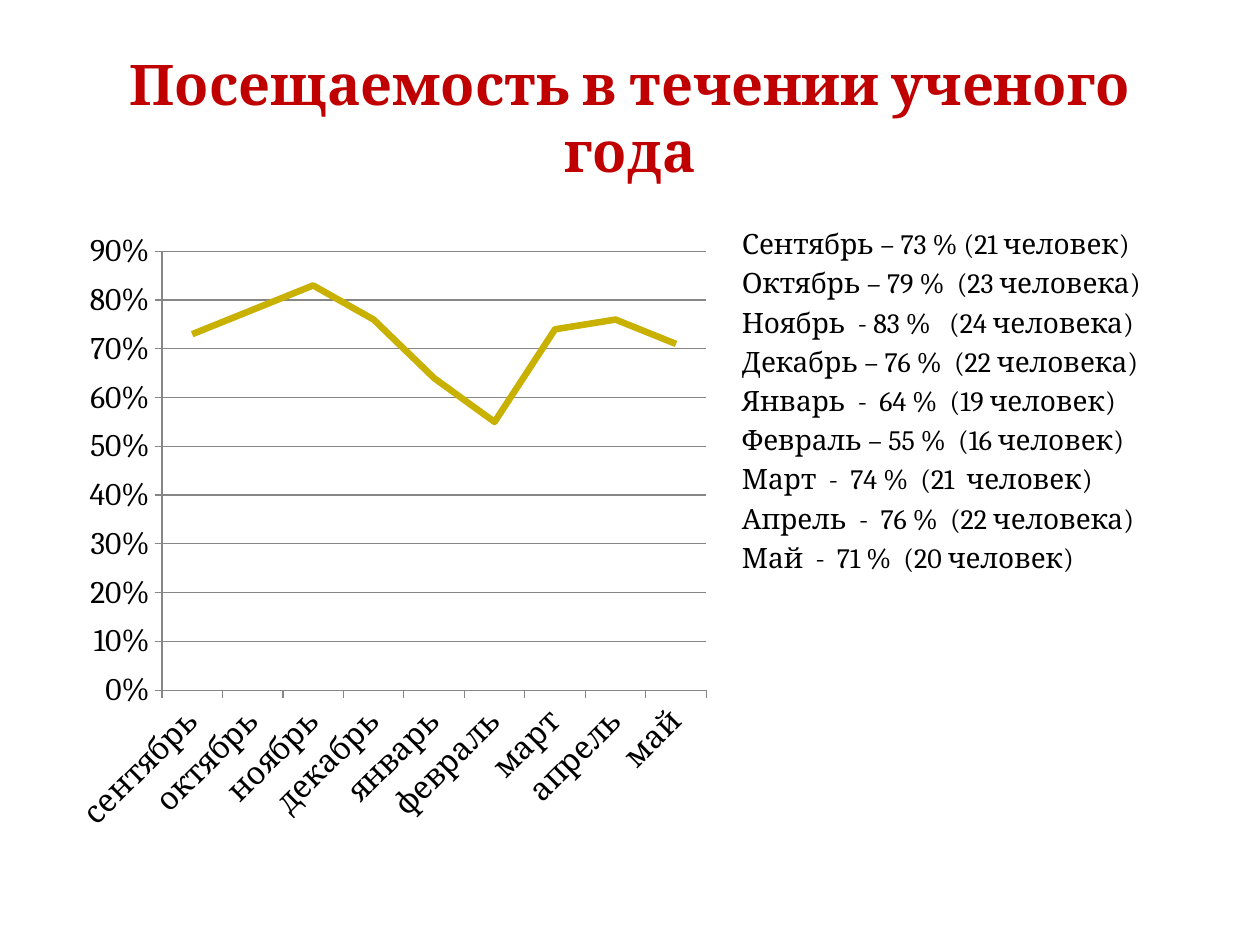
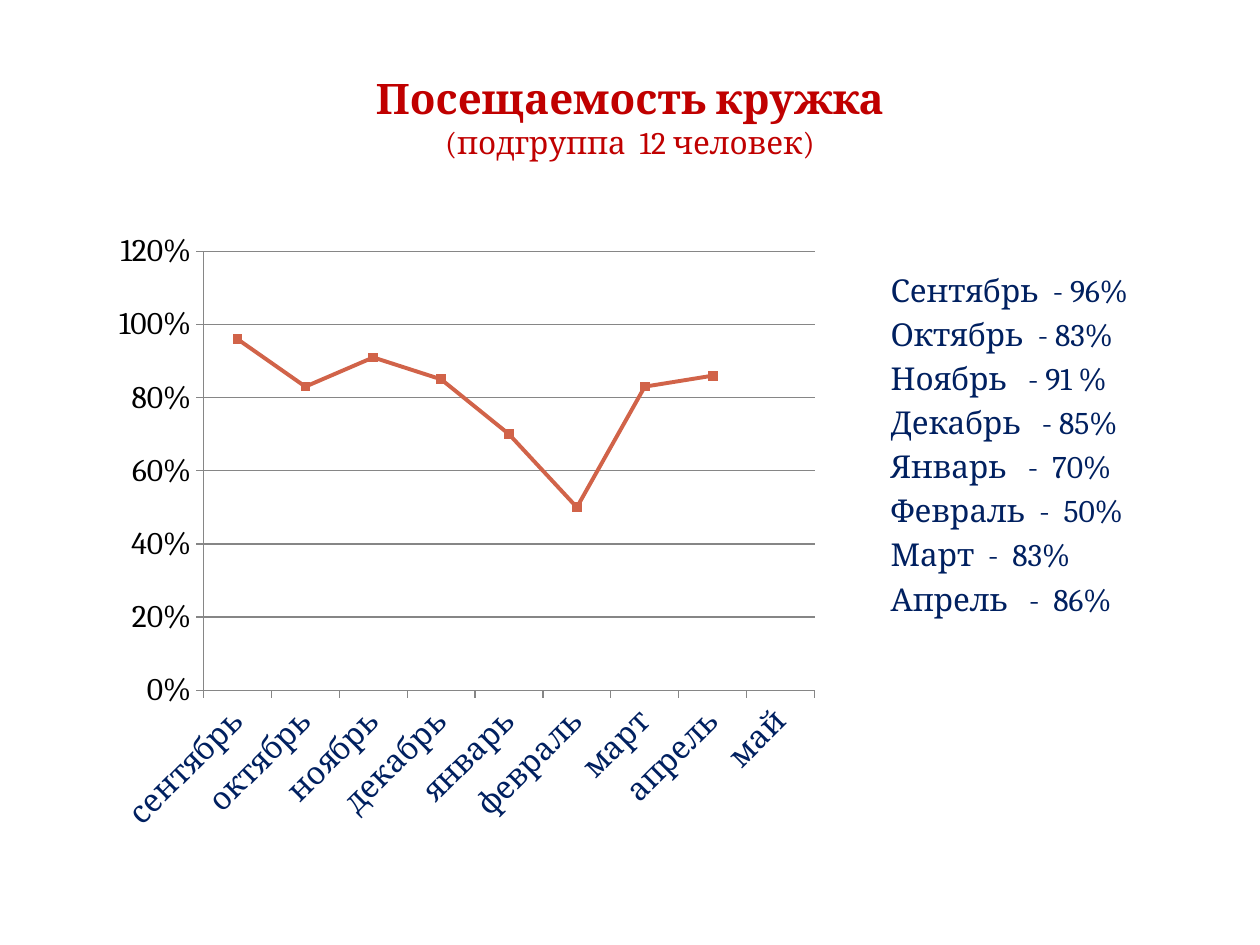
import pptx
import pptx.chart.data
import pptx.dml.color
import pptx.enum.chart
import pptx.enum.text
import pptx.util

Inches = pptx.util.Inches
FONT = "Cambria"
COLORS = {
    "title": "C00000",
    "black": "000000",
    "navy": "002060",
    "grid": "868686",
    "gold": "C8B100",
    "red": "D16349",
}
MONTHS = ["сентябрь", "октябрь", "ноябрь", "декабрь", "январь",
          "февраль", "март", "апрель", "май"]
YEAR_ATTENDANCE = [0.73, 0.78, 0.83, 0.76, 0.64, 0.55, 0.74, 0.76, 0.71]
CLUB_ATTENDANCE = [0.96, 0.83, 0.91, 0.85, 0.7, 0.5, 0.83, 0.86, None]
YEAR_LIST = [
    "Сентябрь – 73 % (21 человек)",
    "Октябрь – 79 %  (23 человека)",
    "Ноябрь  - 83 %   (24 человека)",
    "Декабрь – 76 %  (22 человека)",
    "Январь  -  64 %  (19 человек)",
    "Февраль – 55 %  (16 человек)",
    "Март  -  74 %  (21  человек)",
    "Апрель  -  76 %  (22 человека)",
    "Май  -  71 %  (20 человек)",
]
CLUB_LIST = [
    "Сентябрь  - 96%",
    "Октябрь  - 83%",
    "Ноябрь   - 91 %",
    "Декабрь   - 85%",
    "Январь   -  70%",
    "Февраль  -  50%",
    "Март  -  83%",
    "Апрель   -  86%",
]


def rgb(name):
    return pptx.dml.color.RGBColor.from_string(COLORS[name])


def style_font(font, size, color, bold=False):
    font.name = FONT
    font.size = pptx.util.Pt(size)
    font.bold = bold
    font.color.rgb = rgb(color)


def add_text_frame(slide, box):
    frame = slide.shapes.add_textbox(*map(Inches, box)).text_frame
    frame.word_wrap = True
    return frame


def add_title(slide, lines):
    frame = add_text_frame(slide, (0.5, 0.3, 9, 1.25))
    frame.vertical_anchor = pptx.enum.text.MSO_ANCHOR.MIDDLE
    for index, (text, size, bold) in enumerate(lines):
        paragraph = frame.add_paragraph() if index else frame.paragraphs[0]
        paragraph.text = text
        paragraph.alignment = pptx.enum.text.PP_ALIGN.CENTER
        style_font(paragraph.font, size, "title", bold)


def add_month_list(slide, box, lines, size, color):
    frame = add_text_frame(slide, box)
    for index, line in enumerate(lines):
        paragraph = frame.add_paragraph() if index else frame.paragraphs[0]
        paragraph.text = line
        if index:
            paragraph.space_before = pptx.util.Pt(size * 0.2)
        style_font(paragraph.font, size, color)


def style_axis(axis, label_color):
    axis.major_tick_mark = pptx.enum.chart.XL_TICK_MARK.OUTSIDE
    axis.minor_tick_mark = pptx.enum.chart.XL_TICK_MARK.NONE
    axis.format.line.color.rgb = rgb("grid")
    axis.format.line.width = pptx.util.Pt(0.75)
    style_font(axis.tick_labels.font, 18, label_color)


def add_attendance_chart(slide, box, values, line_color, line_width,
                         maximum, step, month_color, markers):
    chart_data = pptx.chart.data.CategoryChartData(number_format="0%")
    chart_data.categories = MONTHS
    chart_data.add_series("Series 1", values)
    kinds = pptx.enum.chart.XL_CHART_TYPE
    kind = kinds.LINE_MARKERS if markers else kinds.LINE
    chart = slide.shapes.add_chart(kind, *map(Inches, box), chart_data).chart
    chart.has_legend = False
    chart.has_title = False
    style_font(chart.font, 18, "black")

    style_axis(chart.category_axis, month_color)
    value_axis = chart.value_axis
    style_axis(value_axis, "black")
    value_axis.minimum_scale = 0
    value_axis.maximum_scale = maximum
    value_axis.major_unit = step
    value_axis.tick_labels.number_format = "0%"
    value_axis.tick_labels.number_format_is_linked = False
    value_axis.has_major_gridlines = True
    gridline = value_axis.major_gridlines.format.line
    gridline.color.rgb = rgb("grid")
    gridline.width = pptx.util.Pt(0.75)

    chart.plots[0].vary_by_categories = False
    series = chart.plots[0].series[0]
    series.smooth = False
    series.format.line.color.rgb = rgb(line_color)
    series.format.line.width = pptx.util.Pt(line_width)
    if markers:
        series.marker.style = pptx.enum.chart.XL_MARKER_STYLE.SQUARE
        series.marker.size = 5
        series.marker.format.fill.solid()
        series.marker.format.fill.fore_color.rgb = rgb(line_color)
        series.marker.format.line.color.rgb = rgb(line_color)


def main():
    presentation = pptx.Presentation()
    presentation.slide_width = Inches(10)
    presentation.slide_height = Inches(7.5)
    blank = presentation.slide_layouts[6]

    year_slide = presentation.slides.add_slide(blank)
    add_title(year_slide, [("Посещаемость в течении ученого года", 32, True)])
    add_attendance_chart(year_slide, (0.5, 1.75, 5.21, 4.95), YEAR_ATTENDANCE,
                         "gold", 3.75, 0.9, 0.1, "black", markers=False)
    add_month_list(year_slide, (5.79, 1.75, 3.71, 4.95), YEAR_LIST, 16, "black")

    club_slide = presentation.slides.add_slide(blank)
    add_title(club_slide, [("Посещаемость кружка", 24, True),
                           ("(подгруппа  12 человек)", 18, False)])
    add_attendance_chart(club_slide, (0.83, 1.75, 5.75, 4.95), CLUB_ATTENDANCE,
                         "red", 2.25, 1.2, 0.2, "navy", markers=True)
    add_month_list(club_slide, (6.97, 2.1, 2.53, 3.62), CLUB_LIST, 18, "navy")

    presentation.save("out.pptx")


if __name__ == "__main__":
    main()
